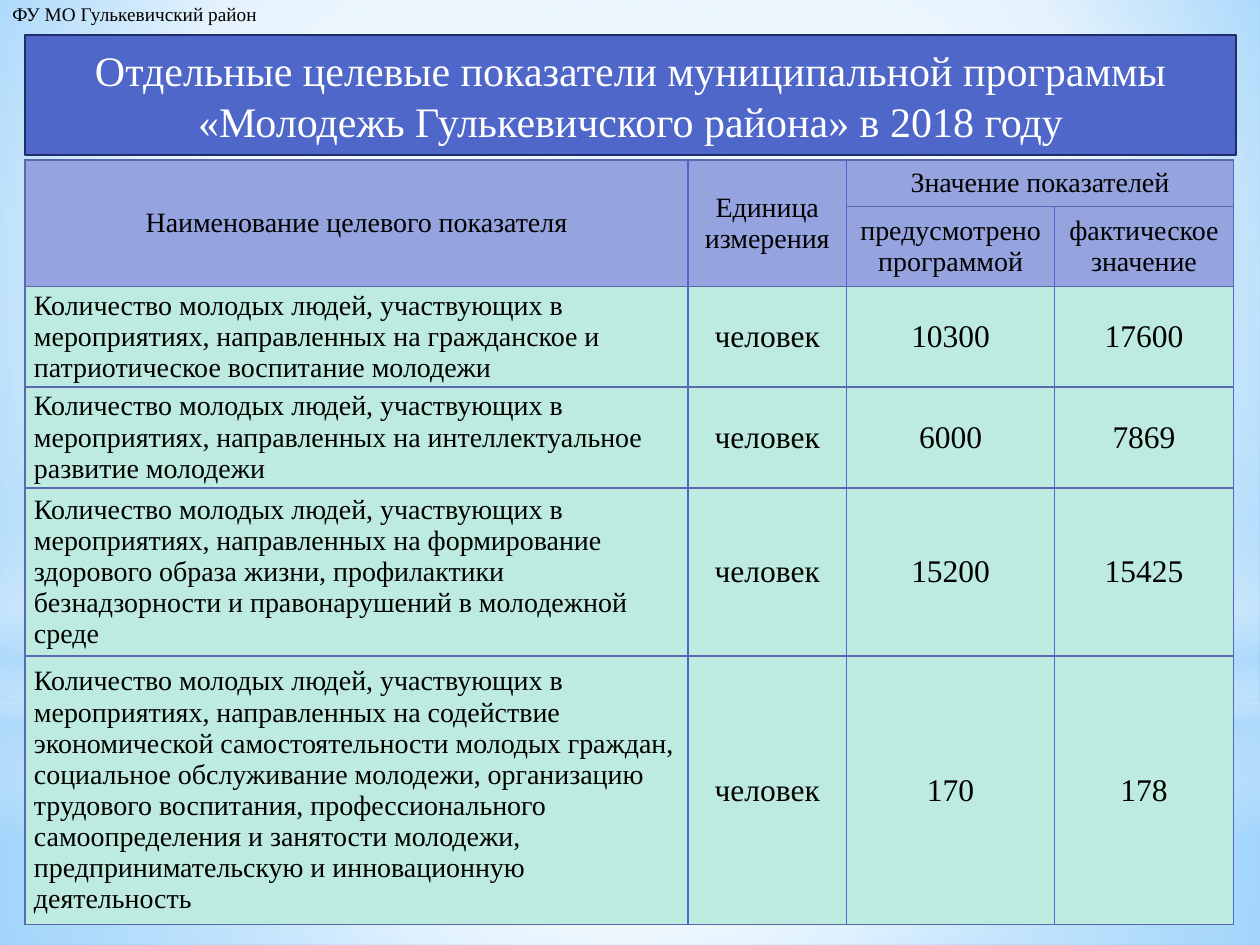
from lxml import etree
from pptx import Presentation
from pptx.dml.color import RGBColor
from pptx.enum.shapes import MSO_SHAPE
from pptx.enum.text import MSO_ANCHOR, MSO_AUTO_SIZE, PP_ALIGN
from pptx.oxml.ns import qn
from pptx.util import Inches, Pt

RECT, OVAL = MSO_SHAPE.RECTANGLE, MSO_SHAPE.OVAL
MIDDLE = MSO_ANCHOR.MIDDLE
LEFT, CENTER = PP_ALIGN.LEFT, PP_ALIGN.CENTER
NO_FIT = MSO_AUTO_SIZE.NONE

FONT = "Times New Roman"
BLACK, WHITE, BLUE, NAVY = "000000", "FFFFFF", "4E67C8", "1F2E69"
EDGE, HEAD, BODY, SKY = "5968B0", "95A4DE", "BEEBDF", "B4DCFA"
MID = (50, 50, 50, 50)

# shape, top, height, gradient stops (position, colour, opacity), centre
GLOWS = [
    (RECT, 5.58, 1.92, [(0, WHITE, 91), (37, WHITE, 76), (100, SKY, 79)], MID),
    (RECT, 0, 5.58, [(0, WHITE, 89), (48, WHITE, 62), (100, SKY, 79)], MID),
    (RECT, 4.12, 2.5, [(0, WHITE, 0), (29, WHITE, 30), (45, SKY, 40),
                       (55, WHITE, 26), (65, SKY, 60), (100, WHITE, 0)], None),
    (OVAL, 1.75, 5.58, [(0, WHITE, 100), (56, WHITE, 0)], MID),
]
COLS = [5.26, 1.26, 1.65, 1.42]
ROWS = [0.37, 0.63, 0.8, 0.8, 1.33, 2.13]
START = "Количество молодых людей, участвующих в мероприятиях, направленных на "
UNIT = "человек"
GOALS = [
    ("гражданское и патриотическое воспитание молодежи", "10300", "17600"),
    ("интеллектуальное развитие молодежи", "6000", "7869"),
    ("формирование здорового образа жизни, профилактики безнадзорности и "
     "правонарушений в молодежной среде", "15200", "15425"),
    ("содействие экономической самостоятельности молодых граждан, социальное "
     "обслуживание молодежи, организацию трудового воспитания, "
     "профессионального самоопределения и занятости молодежи, "
     "предпринимательскую и инновационную деятельность", "170", "178"),
]
CELLS = [
    ["Наименование целевого показателя", "Единица\nизмерения",
     "Значение показателей", ""],
    ["", "", "предусмотрено программой", "фактическое значение"],
] + [[START + goal, UNIT, plan, fact] for goal, plan, fact in GOALS]
SPANS = [((0, 0), (1, 0)), ((0, 1), (1, 1)), ((0, 2), (0, 3))]


def rgb(code):
    return RGBColor.from_string(code)


def put(item, values):
    for name, value in values.items():
        setattr(item, name, value)


def add(parent, tag, **attrs):
    """Append a DrawingML element and return it."""
    node = etree.SubElement(parent, qn("a:" + tag))
    for name, value in attrs.items():
        node.set(name, str(value))
    return node


def blend(fill, root, stops, focus):
    """Give a fill radial stops around focus, or vertical ones without it."""
    fill.gradient()
    grad = next(root.iter(qn("a:gradFill")))
    for child in list(grad):
        grad.remove(child)
    chain = add(grad, "gsLst")
    for pos, code, alpha in stops:
        stop = add(chain, "gs", pos=pos * 1000)
        add(add(stop, "srgbClr", val=code), "alpha", val=alpha * 1000)
    if focus:
        rect = dict(zip("ltrb", (side * 1000 for side in focus)))
        add(add(grad, "path", path="circle"), "fillToRect", **rect)
    else:
        add(grad, "lin", ang=90 * 60000, scaled=0)


class Page:
    def __init__(self, deck):
        self.slide = deck.slides.add_slide(deck.slide_layouts[5])
        self.shapes = self.slide.shapes

    def back(self, stops, focus):
        ground = self.slide.background
        blend(ground.fill, self.slide.element, stops, focus)

    def glow(self, kind, top, height, stops, focus):
        shape = self.shapes.add_shape(kind, 0, Inches(top), Inches(10),
                                      Inches(height))
        shape.shadow.inherit = False
        shape.line.fill.background()
        blend(shape.fill, shape.element.spPr, stops, focus)

    def words(self, frame, text, size, color=BLACK, align=LEFT):
        frame.text = text
        for para in frame.paragraphs:
            para.alignment = align
            for run in para.runs:
                put(run.font, {"name": FONT, "size": Pt(size), "bold": False})
                run.font.color.rgb = rgb(color)

    def label(self, text, x, y, w, h):
        frame = self.shapes.add_textbox(
            *map(Inches, (x, y, w, h))).text_frame
        frame.word_wrap = False
        self.words(frame, text, 11)

    def title(self, text, x, y, w, h):
        """Turn the title placeholder into a rounded banner on top."""
        shape = self.shapes.title
        put(shape, {"left": Inches(x), "top": Inches(y),
                    "width": Inches(w), "height": Inches(h)})
        add(add(shape.element.spPr, "prstGeom", prst="roundRect"), "avLst")
        shape.fill.solid()
        shape.fill.fore_color.rgb = rgb(BLUE)
        shape.line.color.rgb = rgb(NAVY)
        shape.line.width = Pt(1.25)
        put(shape.text_frame, {"word_wrap": True, "auto_size": NO_FIT,
                               "vertical_anchor": MIDDLE})
        self.words(shape.text_frame, text, 24, WHITE, CENTER)
        self.shapes.element.append(shape.element)

    def cell(self, cell, text, row, col):
        head = row < 2
        name = col == 0
        cell.fill.solid()
        cell.fill.fore_color.rgb = rgb(HEAD if head else BODY)
        cell.vertical_anchor = MIDDLE
        if not head:
            put(cell, {"margin_left": Inches(0.07), "margin_right": Inches(0.07),
                       "margin_top": 0, "margin_bottom": 0})
        self.words(cell.text_frame, text, 16 if head or name else 18,
                   align=LEFT if name and not head else CENTER)
        props = cell._tc.get_or_add_tcPr()
        sides = {"L": EDGE if name else BLUE, "R": BLUE, "T": EDGE, "B": EDGE}
        for spot, (side, code) in enumerate(sides.items()):
            line = add(props, "ln" + side, w=Pt(1))
            add(add(line, "solidFill"), "srgbClr", val=code)
            props.insert(spot, line)

    def table(self, x, y):
        table = self.shapes.add_table(
            len(ROWS), len(COLS), Inches(x), Inches(y),
            Inches(sum(COLS)), Inches(sum(ROWS))).table
        put(table, {"first_row": False, "horz_banding": False})
        for col, width in zip(table.columns, COLS):
            col.width = Inches(width)
        for row, height in zip(table.rows, ROWS):
            row.height = Inches(height)
        for r, texts in enumerate(CELLS):
            for c, text in enumerate(texts):
                self.cell(table.cell(r, c), text, r, c)
        for first, last in SPANS:
            table.cell(*first).merge(table.cell(*last))


def main():
    deck = Presentation()
    put(deck, {"slide_width": Inches(10), "slide_height": Inches(7.5)})
    page = Page(deck)
    page.back([(0, "9ED5FF", 100), (60, WHITE, 100), (100, "5BB9FF", 100)],
              (20, 10, 20, 60))
    for glow in GLOWS:
        page.glow(*glow)
    page.label("ФУ МО Гулькевичский район", 0, -0.03, 2.18, 0.29)
    page.table(0.2, 1.27)
    page.title("Отдельные целевые показатели муниципальной программы "
               "«Молодежь Гулькевичского района» в 2018 году",
               0.2, 0.28, 9.61, 0.95)
    deck.save("out.pptx")


if __name__ == "__main__":
    main()
